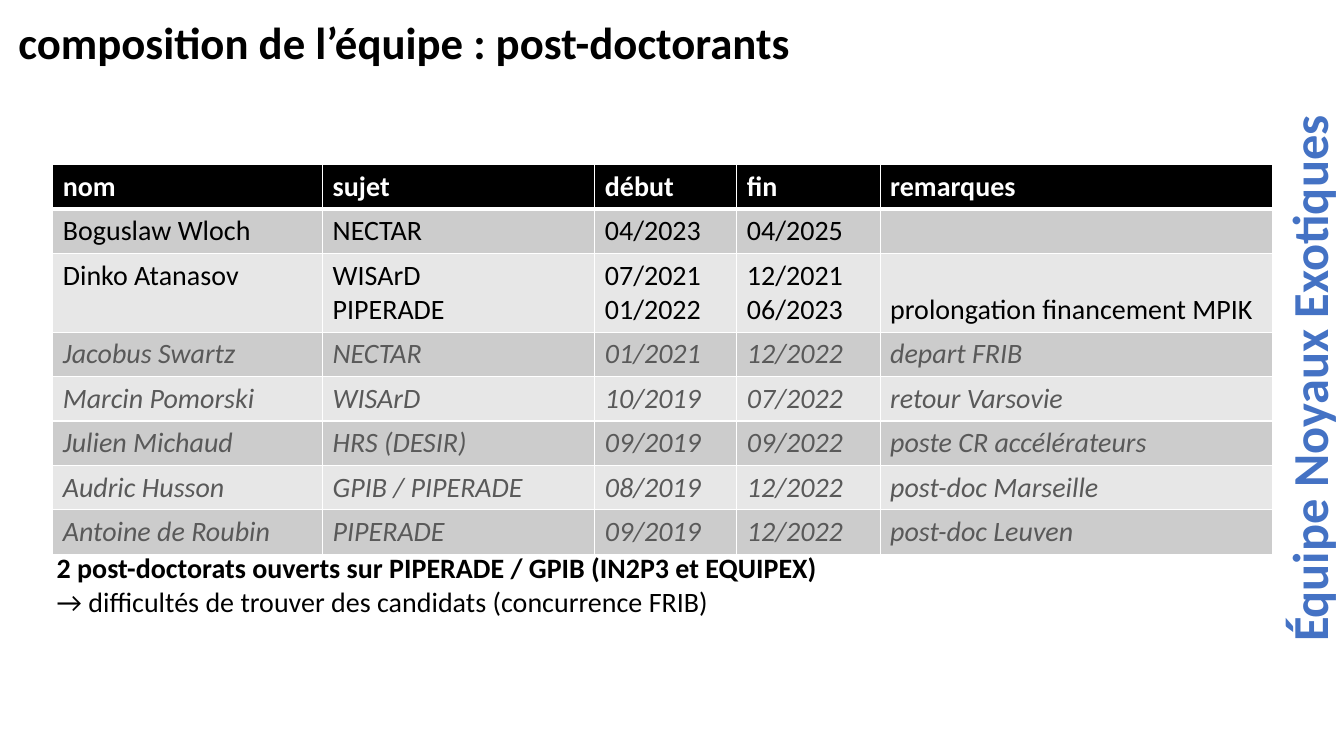
import pptx
import pptx.dml.color
import pptx.enum.text
import pptx.oxml
import pptx.oxml.ns
import pptx.util

Cm = pptx.util.Cm
Pt = pptx.util.Pt
ANCHOR = pptx.enum.text.MSO_ANCHOR
ALIGN = pptx.enum.text.PP_ALIGN

# Content
TITLE = "composition de l’équipe : post-doctorants"
TEAM = "Équipe Noyaux Exotiques"
HEADER = ("nom", "sujet", "début", "fin", "remarques")
CURRENT = [
    ("Boguslaw Wloch", "NECTAR", "04/2023", "04/2025", ""),
    ("Dinko Atanasov", "WISArD\nPIPERADE", "07/2021\n01/2022",
     "12/2021\n06/2023", "prolongation financement MPIK"),
]
FORMER = [
    ("Jacobus Swartz", "NECTAR", "01/2021", "12/2022", "depart FRIB"),
    ("Marcin Pomorski", "WISArD", "10/2019", "07/2022", "retour Varsovie"),
    ("Julien Michaud", "HRS (DESIR)", "09/2019", "09/2022", "poste CR accélérateurs"),
    ("Audric Husson", "GPIB / PIPERADE", "08/2019", "12/2022", "post-doc Marseille"),
    ("Antoine de Roubin", "PIPERADE", "09/2019", "12/2022", "post-doc Leuven"),
]
NOTES = [
    "2 post-doctorats ouverts sur PIPERADE / GPIB (IN2P3 et EQUIPEX)",
    "→ difficultés de trouver des candidats (concurrence FRIB)",
]

COL_WIDTHS = (6.8, 6.86, 3.58, 3.61, 9.88)
ROW_HEIGHT, TALL_ROW = 1.1, 1.95
BANDS = ("E7E7E7", "CCCCCC")


def rgb(value):
    return pptx.dml.color.RGBColor.from_string(value)


def style(tf, size, color="000000", bold=False, italic=False):
    for p in tf.paragraphs:
        for r in p.runs:
            r.font.name = "Calibri"
            r.font.size = Pt(size)
            r.font.bold = bold
            r.font.italic = italic
            r.font.color.rgb = rgb(color)


def set_frame(tf, margin):
    tf.word_wrap = False
    tf.auto_size = pptx.enum.text.MSO_AUTO_SIZE.NONE
    tf.margin_left = tf.margin_right = tf.margin_top = tf.margin_bottom = Cm(margin)


def set_borders(cell, top, bottom):
    tcPr = cell._tc.get_or_add_tcPr()
    for side, width in (("L", 1), ("R", 1), ("T", top), ("B", bottom)):
        tcPr.append(pptx.oxml.parse_xml(
            f'<a:ln{side} {pptx.oxml.ns.nsdecls("a")} w="{Pt(width)}">'
            f'<a:solidFill><a:srgbClr val="FFFFFF"/></a:solidFill></a:ln{side}>'))


prs = pptx.Presentation()
prs.slide_width, prs.slide_height = Cm(33.87), Cm(19.05)
s = prs.slides.add_slide(prs.slide_layouts[5])

# Title
sp = s.shapes.title
sp.left, sp.top, sp.width, sp.height = Cm(0.36), Cm(0.25), Cm(20), Cm(1.58)
sp.text_frame.text = TITLE
set_frame(sp.text_frame, 0.1)
sp.text_frame.vertical_anchor = ANCHOR.MIDDLE
sp.text_frame.paragraphs[0].alignment = ALIGN.LEFT
style(sp.text_frame, 32, bold=True)

# Team name along the right edge
sp = s.shapes.add_textbox(Cm(26.01), Cm(8.64), Cm(13.92), Cm(1.8))
sp.rotation = 270
sp.text_frame.text = TEAM
set_frame(sp.text_frame, 0.13)
sp.text_frame.paragraphs[0].alignment = ALIGN.CENTER
style(sp.text_frame, 36, "4472C4", bold=True)

# Table of post-docs
rows = [HEADER] + CURRENT + FORMER
heights = [TALL_ROW if any("\n" in text for text in row) else ROW_HEIGHT for row in rows]
table = s.shapes.add_table(len(rows), len(HEADER), Cm(1.33), Cm(4.15),
                           Cm(sum(COL_WIDTHS)), Cm(sum(heights))).table
for column, width in zip(table.columns, COL_WIDTHS):
    column.width = Cm(width)
for i, row in enumerate(rows):
    table.rows[i].height = Cm(heights[i])
    is_header = i == 0
    is_former = i > len(CURRENT)
    color = "FFFFFF" if is_header else "595959" if is_former else "000000"
    for j, text in enumerate(row):
        cell = table.cell(i, j)
        cell.text_frame.text = text
        style(cell.text_frame, 20, color, bold=is_header, italic=is_former)
        set_borders(cell, top=3 if i == 1 else 1, bottom=3 if is_header else 1)
        cell.fill.solid()
        cell.fill.fore_color.rgb = rgb("000000" if is_header else BANDS[i % 2])
        # The remark of a two-line row belongs to its last line
        if j == len(HEADER) - 1:
            cell.vertical_anchor = ANCHOR.BOTTOM

# Notes under the table
sp = s.shapes.add_textbox(Cm(1.33), Cm(13.77), Cm(19.53), Cm(1.9))
tf = sp.text_frame
tf.text = "\n".join(NOTES)
set_frame(tf, 0.1)
style(tf, 20)
tf.paragraphs[0].runs[0].font.bold = True

prs.save("out.pptx")
